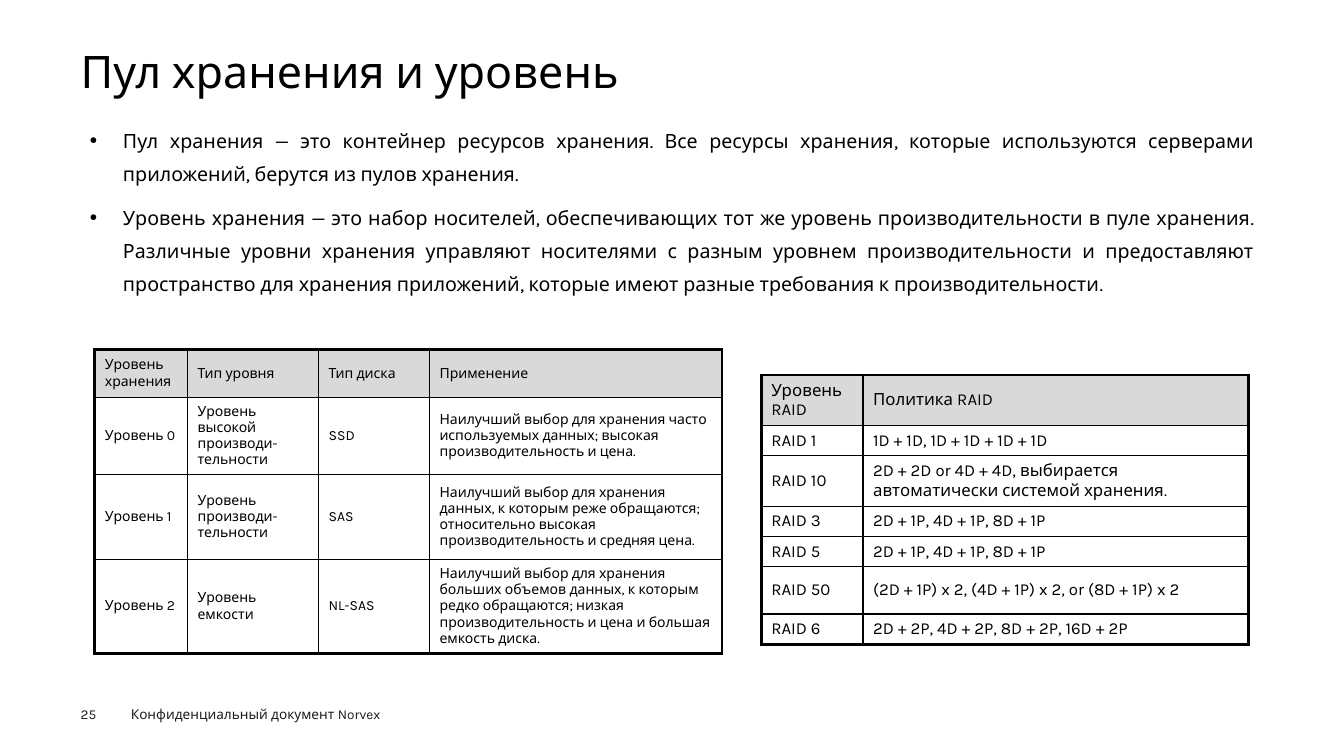
"""Build the slide about storage pools and tiers."""
import copy

import lxml.etree
import pptx
import pptx.dml.color
import pptx.enum.text
import pptx.oxml.ns
import pptx.util

Inches = pptx.util.Inches
Pt = pptx.util.Pt
qn = pptx.oxml.ns.qn

FONT = "Karla"
BLACK = "000000"
FOOTER_COLOR = "1D1D1B"
HEADER_FILL = "D9D9D9"
OUTER_LINE, INNER_LINE = 2.25, 1

POINTS = [
    "Пул хранения — это контейнер ресурсов хранения. Все ресурсы хранения, которые используются серверами приложений, берутся из пулов хранения.",
    "Уровень хранения — это набор носителей, обеспечивающих тот же уровень производительности в пуле хранения. Различные уровни хранения управляют носителями с разным уровнем производительности и предоставляют пространство для хранения приложений, которые имеют разные требования к производительности.",
]
TIERS = [
    ["Уровень хранения", "Тип уровня", "Тип диска", "Применение"],
    ["Уровень 0", "Уровень высокой производи-\nтельности", "SSD",
     "Наилучший выбор для хранения часто используемых данных; высокая производительность и цена."],
    ["Уровень 1", "Уровень производи-\nтельности", "SAS",
     "Наилучший выбор для хранения данных, к которым реже обращаются; относительно высокая производительность и средняя цена."],
    ["Уровень 2", "Уровень емкости", "NL-SAS",
     "Наилучший выбор для хранения больших объемов данных, к которым редко обращаются; низкая производительность и цена и большая емкость диска."],
]
RAID_POLICIES = [
    ["Уровень RAID", "Политика RAID"],
    ["RAID 1", "1D + 1D, 1D + 1D + 1D + 1D"],
    ["RAID 10", "2D + 2D or 4D + 4D, выбирается автоматически системой хранения."],
    ["RAID 3", "2D + 1P, 4D + 1P, 8D + 1P"],
    ["RAID 5", "2D + 1P, 4D + 1P, 8D + 1P"],
    ["RAID 50", "(2D + 1P) x 2, (4D + 1P) x 2, or (8D + 1P) x 2"],
    ["RAID 6", "2D + 2P, 4D + 2P, 8D + 2P, 16D + 2P"],
]


def color(value):
    """Return the colour for a hex string."""
    return pptx.dml.color.RGBColor.from_string(value)


def add_bullet(paragraph):
    """Give a paragraph a small round bullet with a hanging indent."""
    properties = paragraph._p.get_or_add_pPr()
    properties.set("marL", str(Inches(0.33)))
    properties.set("indent", str(-Inches(0.33)))
    for tag, name, value in (("a:buSzPct", "val", "50000"), ("a:buChar", "char", "●")):
        lxml.etree.SubElement(properties, qn(tag)).set(name, value)


def write_text(paragraph, text, size, fill=BLACK, spacing=None, before=None,
               justified=False, bullet=False):
    """Write formatted text into a paragraph."""
    if bullet:
        add_bullet(paragraph)
    if spacing:
        paragraph.line_spacing = spacing
    if before:
        paragraph.space_before = Pt(before)
    if justified:
        paragraph.alignment = pptx.enum.text.PP_ALIGN.JUSTIFY
    paragraph.text = text
    for run in paragraph.runs:
        run.font.name = FONT
        run.font.size = Pt(size)
        run.font.color.rgb = color(fill)
    for line_break in paragraph._p.findall(qn("a:br")):
        line_break.append(copy.deepcopy(paragraph.runs[0]._r.rPr))


def add_text(slide, box, texts, insets=(0, 0), before=None, **text_format):
    """Add a text box with one paragraph for each text."""
    shape = slide.shapes.add_textbox(*map(Inches, box))
    frame = shape.text_frame
    frame.word_wrap = True
    frame.margin_left = frame.margin_right = Inches(insets[0])
    frame.margin_top = frame.margin_bottom = Inches(insets[1])
    for index, text in enumerate(texts):
        paragraph = frame.add_paragraph() if index else frame.paragraphs[0]
        write_text(paragraph, text, before=before if index else None, **text_format)


def set_borders(cell, outer_sides):
    """Draw the four borders of a cell, thick on the outer sides."""
    properties = cell._tc.get_or_add_tcPr()
    for side in "LRTB":
        width = OUTER_LINE if side in outer_sides else INNER_LINE
        line = lxml.etree.SubElement(properties, qn(f"a:ln{side}"), w=str(Pt(width)))
        fill = lxml.etree.SubElement(line, qn("a:solidFill"))
        lxml.etree.SubElement(fill, qn("a:srgbClr"), val=BLACK)


def add_grid(slide, left, top, widths, heights, rows, size):
    """Add a table with a grey header and a thick frame."""
    shape = slide.shapes.add_table(len(rows), len(widths), Inches(left), Inches(top),
                                   Inches(sum(widths)), Inches(sum(heights)))
    table = shape.table
    table.first_row = table.horz_banding = False
    for column, width in zip(table.columns, widths):
        column.width = Inches(width)
    for row, height in zip(table.rows, heights):
        row.height = Inches(height)
    last_row, last_column = len(rows) - 1, len(widths) - 1
    for row_index, texts in enumerate(rows):
        for column_index, text in enumerate(texts):
            cell = table.cell(row_index, column_index)
            sides = {"L": column_index == 0, "R": column_index == last_column,
                     "T": row_index == 0, "B": row_index == last_row}
            set_borders(cell, [side for side, outer in sides.items() if outer])
            if row_index == 0:
                cell.fill.solid()
                cell.fill.fore_color.rgb = color(HEADER_FILL)
            else:
                cell.fill.background()
            cell.vertical_anchor = pptx.enum.text.MSO_ANCHOR.MIDDLE
            cell.margin_left = cell.margin_right = Inches(0.1)
            cell.margin_top = cell.margin_bottom = Inches(0.05)
            write_text(cell.text_frame.paragraphs[0], text, size)


def main():
    """Build and save the presentation."""
    presentation = pptx.Presentation()
    presentation.slide_width = Inches(13.33)
    presentation.slide_height = Inches(7.5)
    slide = presentation.slides.add_slide(presentation.slide_layouts[6])
    add_text(slide, (1.2, 6.95, 2.86, 0.26), ["Конфиденциальный документ Norvex"],
             insets=(0.1, 0.05), size=9.7, fill=FOOTER_COLOR)
    add_text(slide, (0.8, 7, 0.55, 0.16), ["25"], size=9.7, fill=FOOTER_COLOR)
    add_text(slide, (0.8, 0.49, 11.73, 0.54), ["Пул хранения и уровень"], size=32, spacing=0.9)
    add_text(slide, (0.8, 1.15, 11.73, 5.33), POINTS, insets=(0.09, 0.04), size=14,
             spacing=1.4, before=7.9, justified=True, bullet=True)
    add_grid(slide, 0.94, 3.47, [0.92, 1.3, 1.1, 2.9], [0.47, 0.75, 0.84, 0.91], TIERS, 10)
    add_grid(slide, 7.55, 3.72, [1.01, 3.82], [0.49, 0.3, 0.5, 0.3, 0.3, 0.47, 0.3],
             RAID_POLICIES, 12)
    presentation.save("out.pptx")


if __name__ == "__main__":
    main()
